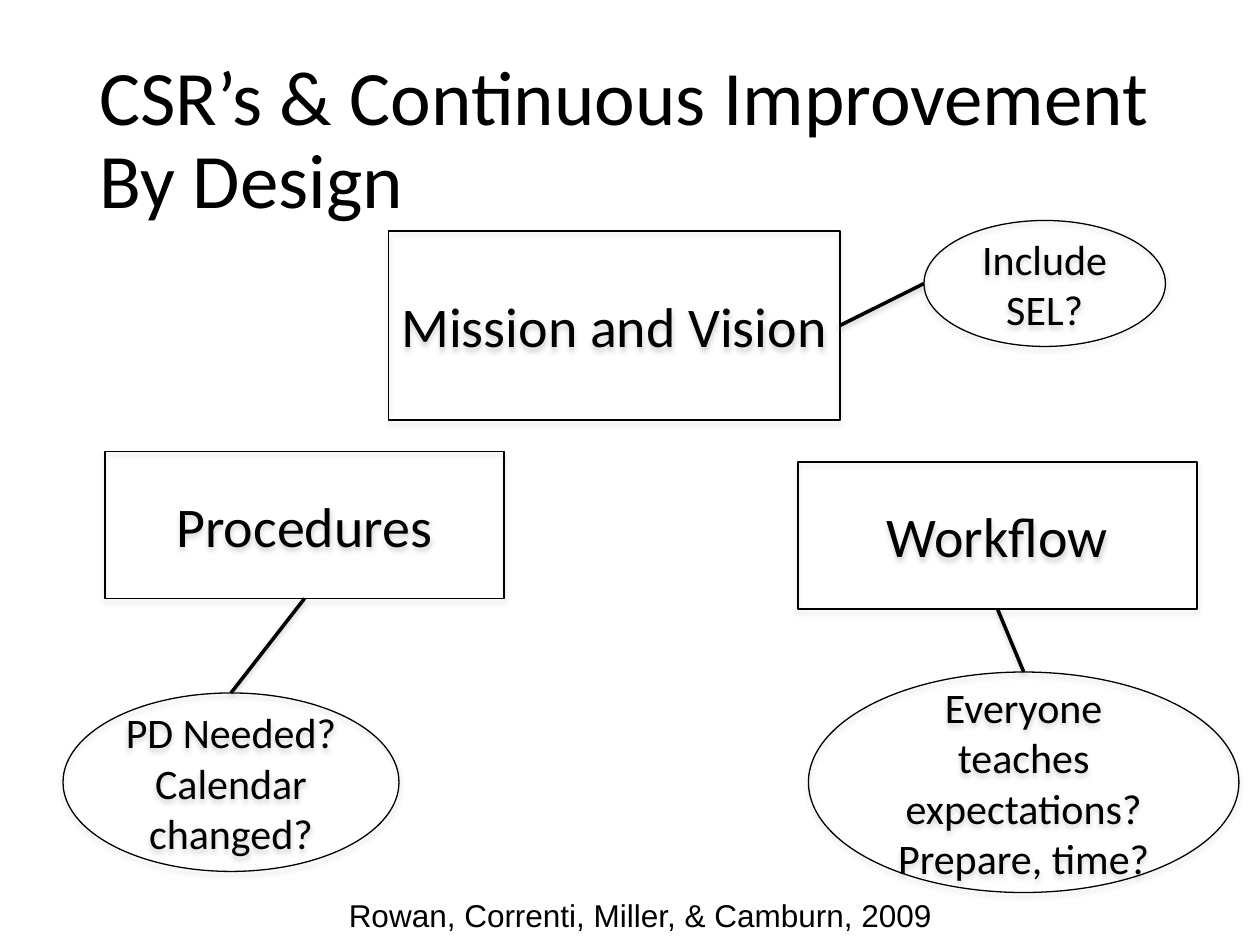
from pptx import Presentation
from pptx.dml.color import RGBColor
from pptx.enum.shapes import MSO_CONNECTOR, MSO_SHAPE
from pptx.enum.text import MSO_ANCHOR, MSO_AUTO_SIZE, PP_ALIGN
from pptx.oxml import parse_xml
from pptx.oxml.ns import nsdecls
from pptx.util import Inches, Pt

BLACK, GREY = "000000", "808080"
UNIT = Inches(1) // 12  # grid: twelve columns or rows to the inch


def color(value):
    return RGBColor.from_string(value)


def write(tf, text, size, font="Calibri", align=PP_ALIGN.LEFT):
    tf.text = text
    p = tf.paragraphs[0]
    p.alignment = align
    f = p.runs[0].font
    f.size, f.name = Pt(size), font
    f.color.rgb = color(BLACK)
    return p


def add_shadow(sp, dist, alpha):
    """Soft shadow straight below; call it after fill and line are set."""
    sp._element.spPr.append(parse_xml(
        f'<a:effectLst {nsdecls("a")}>'
        f'<a:outerShdw blurRad="{Pt(3.1)}" dist="{Pt(dist)}" dir="5400000" rotWithShape="0">'
        f'<a:srgbClr val="{GREY}"><a:alpha val="{alpha * 1000}"/></a:srgbClr>'
        '</a:outerShdw></a:effectLst>'))


def set_line(sp, width):
    sp.line.color.rgb = color(BLACK)
    sp.line.width = Pt(width)


def add_title(s, box, text):
    sp = s.shapes.title
    sp.left, sp.top, sp.width, sp.height = (Inches(v) for v in box)
    tf = sp.text_frame
    tf.auto_size = MSO_AUTO_SIZE.NONE
    tf.vertical_anchor = MSO_ANCHOR.MIDDLE
    write(tf, text, 44).line_spacing = 0.9


def add_node(s, kind, box, text, size):
    sp = s.shapes.add_shape(kind, *(v * UNIT for v in box))
    sp.fill.background()
    set_line(sp, 0.75)
    add_shadow(sp, 1.8, 35)
    tf = sp.text_frame
    tf.word_wrap = True
    tf.vertical_anchor = MSO_ANCHOR.MIDDLE
    write(tf, text, size, align=PP_ALIGN.CENTER)
    return sp


def side(sp, name):
    """Middle of one side of a node."""
    x, y = {"top": (0.5, 0), "bottom": (0.5, 1), "left": (0, 0.5), "right": (1, 0.5)}[name]
    return int(sp.left + x * sp.width), int(sp.top + y * sp.height)


def add_link(s, start, end):
    c = s.shapes.add_connector(MSO_CONNECTOR.STRAIGHT, *start, *end)
    set_line(c, 2)
    add_shadow(c, 1.6, 38)


def add_diagram(s):
    # Each topic and its question: boxes in grid units, then the sides joined
    branches = [
        ("Mission and Vision", (37, 22, 43, 18), "right",
         "Include SEL?", (88, 21, 23, 12), "left"),
        ("Procedures", (10, 43, 38, 14), "bottom",
         "PD Needed? Calendar changed?", (6, 66, 32, 17), "top"),
        ("Workflow", (76, 44, 38, 14), "bottom",
         "Everyone teaches expectations? Prepare, time?", (77, 64, 41, 21), "top"),
    ]
    for topic, topic_box, leave, question, question_box, arrive in branches:
        rect = add_node(s, MSO_SHAPE.RECTANGLE, topic_box, topic, 32)
        oval = add_node(s, MSO_SHAPE.OVAL, question_box, question, 24)
        add_link(s, side(rect, leave), side(oval, arrive))


def add_citation(s, box, text):
    tf = s.shapes.add_textbox(*(Inches(v) for v in box)).text_frame
    tf.word_wrap = False
    tf.auto_size = MSO_AUTO_SIZE.SHAPE_TO_FIT_TEXT
    write(tf, text, 18, font="Arial")


def main():
    prs = Presentation()
    prs.slide_width, prs.slide_height = Inches(10), Inches(7.5)
    s = prs.slides.add_slide(prs.slide_layouts[5])
    add_title(s, (0.69, 0.4, 8.62, 1.45), "CSR’s & Continuous Improvement By Design")
    add_diagram(s)
    add_citation(s, (2.67, 7.06, 4.87, 0.4), "Rowan, Correnti, Miller, & Camburn, 2009")
    prs.save("out.pptx")


if __name__ == "__main__":
    main()
